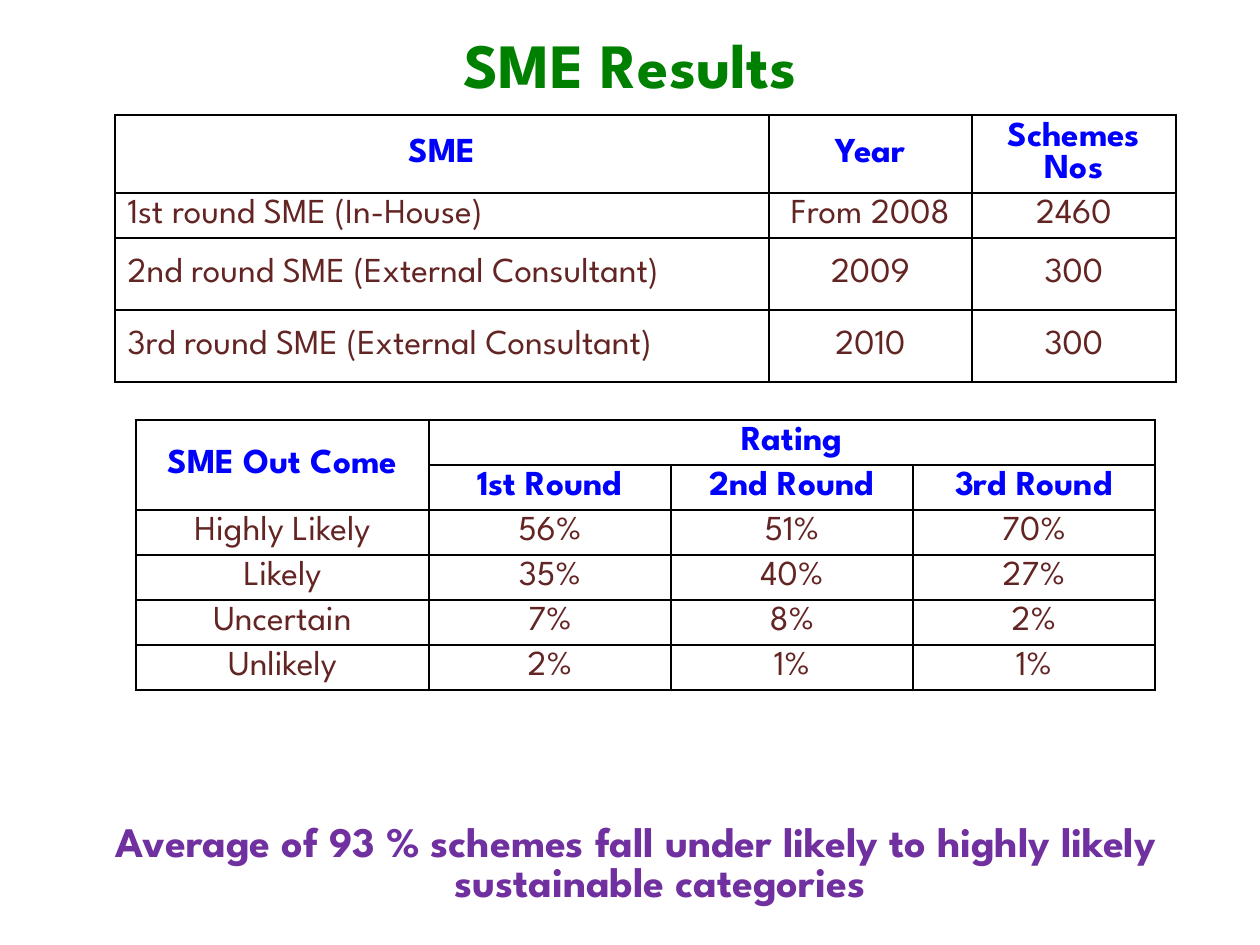
import pptx
import pptx.dml.color
import pptx.enum.text
import pptx.oxml
import pptx.oxml.ns
import pptx.util

PX = 914400 / 126
GREEN = pptx.dml.color.RGBColor(0x00, 0x80, 0x00)
BLUE = pptx.dml.color.RGBColor(0x00, 0x00, 0xFF)
BROWN = pptx.dml.color.RGBColor(0x63, 0x25, 0x23)
PURPLE = pptx.dml.color.RGBColor(0x70, 0x30, 0xA0)
BLACK = pptx.dml.color.RGBColor(0x00, 0x00, 0x00)
ALIGN = pptx.enum.text.PP_ALIGN
ANCHOR = pptx.enum.text.MSO_ANCHOR


def px(*lengths):
    return [pptx.util.Emu(round(length * PX)) for length in lengths]


def write(frame, text, size=20, color=BROWN, bold=False, align=ALIGN.CENTER, spacing=1.0):
    para = frame.paragraphs[0]
    para.alignment = align
    para.line_spacing = spacing
    para.space_before = pptx.util.Pt(0)
    span = para.add_run()
    span.text = text
    span.font.name = "League Spartan"
    span.font.size = pptx.util.Pt(size)
    span.font.bold = bold
    span.font.color.rgb = color
    return para


deck = pptx.Presentation()
deck.slide_width, deck.slide_height = px(1260, 945)
page = deck.slides.add_slide(deck.slide_layouts[1])
title, body = page.placeholders

# Title
title.left, title.top, title.width, title.height = px(63, 21, 1134, 84)
title.text_frame.auto_size = pptx.enum.text.MSO_AUTO_SIZE.NONE
title.text_frame.vertical_anchor = ANCHOR.MIDDLE
write(title.text_frame, "SME Results", size=36, color=GREEN, bold=True)

# Tables: position, columns, rows, header rows, first column alignment, merges, text
rounds = dict(
    at=(115, 115), columns=[654, 203, 204], rows=[78, 45, 72, 72],
    headers=1, first=ALIGN.LEFT, merges=[],
    text=[
        ["SME", "Year", "Schemes Nos"],
        ["1st round SME (In-House)", "From 2008", "2460"],
        ["2nd round SME (External Consultant)", "2009", "300"],
        ["3rd round SME (External Consultant)", "2010", "300"],
    ])
ratings = dict(
    at=(136, 420), columns=[293, 242, 242, 242], rows=[45] * 6,
    headers=2, first=ALIGN.CENTER, merges=[((0, 0), (1, 0)), ((0, 1), (0, 3))],
    text=[
        ["SME Out Come", "Rating", "", ""],
        ["", "1st Round", "2nd Round", "3rd Round"],
        ["Highly Likely", "56%", "51%", "70%"],
        ["Likely", "35%", "40%", "27%"],
        ["Uncertain", "7%", "8%", "2%"],
        ["Unlikely", "2%", "1%", "1%"],
    ])

for data in (rounds, ratings):
    columns, rows = data["columns"], data["rows"]
    table = page.shapes.add_table(
        len(rows), len(columns), *px(*data["at"], sum(columns), sum(rows))).table
    table.first_row = table.horz_banding = False
    for column, width in zip(table.columns, px(*columns)):
        column.width = width
    for row, height in zip(table.rows, px(*rows)):
        row.height = height
    for start, end in data["merges"]:
        table.cell(*start).merge(table.cell(*end))

    for r, line in enumerate(data["text"]):
        header = r < data["headers"]
        for c, text in enumerate(line):
            cell = table.cell(r, c)
            cell.vertical_anchor = ANCHOR.MIDDLE
            if text:
                write(cell.text_frame, text, color=BLUE if header else BROWN, bold=header,
                      align=data["first"] if c == 0 and not header else ALIGN.CENTER)
            # Borders come before the fill in the cell properties
            for side in ("lnL", "lnR", "lnT", "lnB"):
                cell._tc.get_or_add_tcPr().append(pptx.oxml.parse_xml(
                    f'<a:{side} {pptx.oxml.ns.nsdecls("a")} w="12700"><a:solidFill>'
                    f'<a:srgbClr val="{BLACK}"/></a:solidFill></a:{side}>'))
            cell.fill.background()

# Conclusion
body.left, body.top, body.width, body.height = px(53, 819, 1166, 95)
body.text_frame.auto_size = pptx.enum.text.MSO_AUTO_SIZE.NONE
para = write(body.text_frame,
             "Average of 93 % schemes fall under likely to highly likely sustainable categories",
             size=24, color=PURPLE, bold=True, spacing=0.8)
indent = px(48)[0]
properties = para._p.get_or_add_pPr()
properties.set("marL", str(indent))
properties.set("indent", str(-indent))
properties.append(pptx.oxml.parse_xml(f'<a:buNone {pptx.oxml.ns.nsdecls("a")}/>'))

deck.save("out.pptx")
